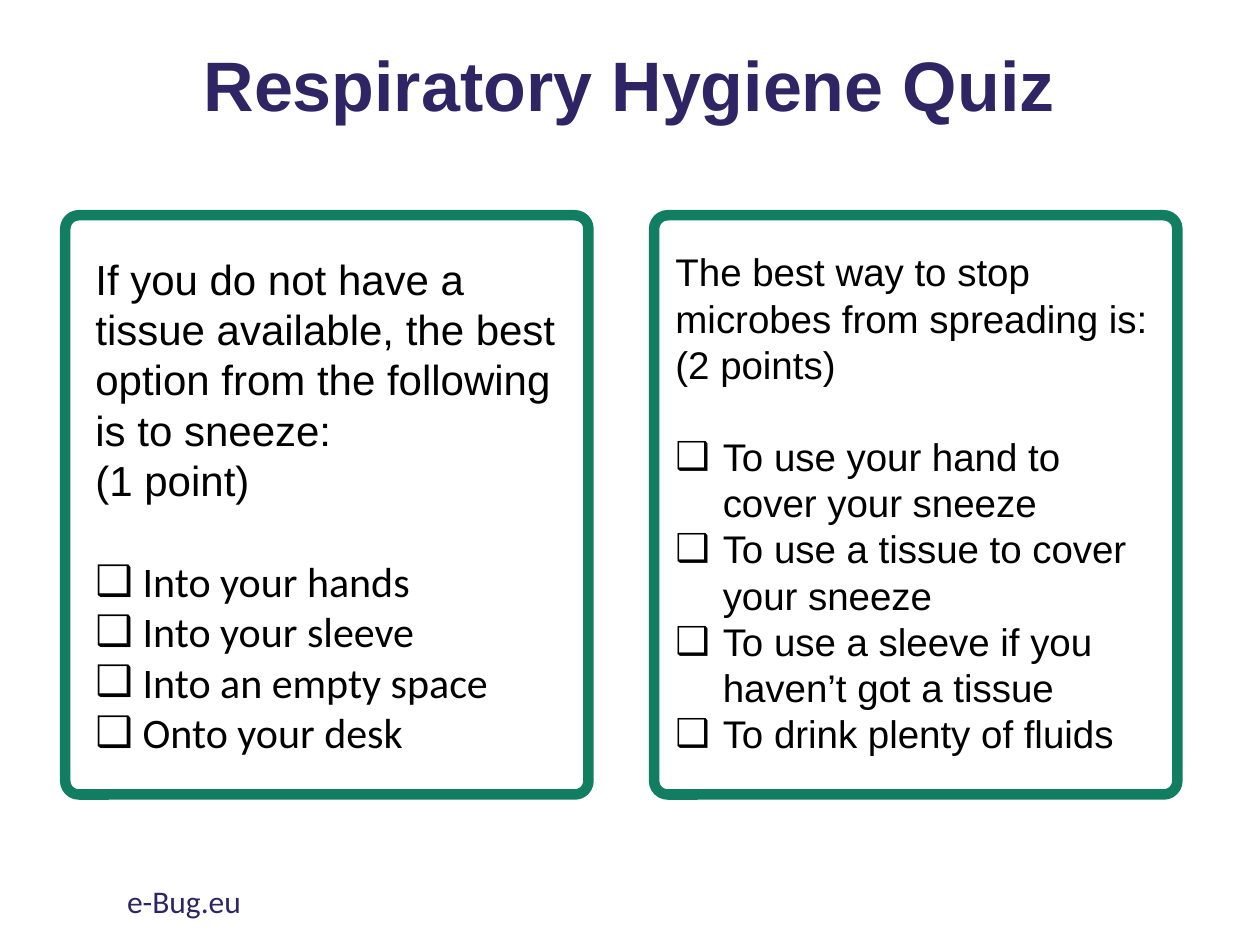
from lxml import etree
from pptx import Presentation
from pptx.dml.color import RGBColor
from pptx.enum import shapes, text
from pptx.oxml import ns
from pptx.util import Pt

COLORS = {"navy": "302564", "green": "117E62", "black": "000000"}
LINE_FACTOR = 1.2
HANGING = 27
CARD_TOP, CARD_WIDTH, CARD_HEIGHT = 123, 299, 331


def rgb(name):
    return RGBColor.from_string(COLORS[name])


def place(shape, box):
    shape.left, shape.top, shape.width, shape.height = (Pt(value) for value in box)


def add_run(paragraph, words, size, font, color, bold=False):
    run = paragraph.add_run()
    run.text = words
    run.font.size = Pt(size)
    run.font.name = font
    run.font.bold = bold
    run.font.color.rgb = rgb(color)


def set_bullet(paragraph, character=None):
    """Give a paragraph a hanging bullet, or clear the inherited one."""
    properties = paragraph._p.get_or_add_pPr()
    hanging = HANGING if character else 0
    properties.set("marL", str(Pt(hanging)))
    properties.set("indent", str(Pt(-hanging)))
    tag = "a:buChar" if character else "a:buNone"
    bullet = etree.SubElement(properties, ns.qn(tag))
    if character:
        bullet.set("char", character)


def add_title(slide, box):
    title = slide.shapes.title
    place(title, box)
    frame = title.text_frame
    frame.vertical_anchor = text.MSO_ANCHOR.MIDDLE
    frame.auto_size = text.MSO_AUTO_SIZE.NONE
    paragraph = frame.paragraphs[0]
    paragraph.alignment = text.PP_ALIGN.CENTER
    paragraph.line_spacing = 0.9
    add_run(paragraph, "Respiratory Hygiene Quiz", 40, "Arial", "navy", bold=True)


def add_card(slide, box):
    card = slide.shapes.add_shape(
        shapes.MSO_SHAPE.ROUNDED_RECTANGLE, *(Pt(value) for value in box))
    card.adjustments[0] = 0.026
    card.shadow.inherit = False
    card.fill.background()
    card.line.color.rgb = rgb("green")
    card.line.width = Pt(6)


def add_question(slide, box, index, inset, size, prompts, answers, answer_font):
    """Draw a card and fill a body placeholder inset (x, y) from its corner."""
    add_card(slide, box)
    left, top, width, height = box
    x, y = inset
    body = slide.placeholders[index]
    place(body, (left + x, top + y, width - 2 * x, height - 2 * y))
    frame = body.text_frame
    frame.auto_size = text.MSO_AUTO_SIZE.NONE
    line_height = size * LINE_FACTOR
    for number, words in enumerate(prompts + answers):
        paragraph = frame.add_paragraph() if number else frame.paragraphs[0]
        is_answer = number >= len(prompts)
        set_bullet(paragraph, "❑" if is_answer else None)
        paragraph.line_spacing = Pt(line_height)
        paragraph.space_before = Pt(line_height if number == len(prompts) else 0)
        add_run(paragraph, words, size, answer_font if is_answer else "Arial", "black")


def add_footer(slide, box):
    footer = slide.shapes.add_textbox(*(Pt(value) for value in box))
    footer.text_frame.word_wrap = True
    add_run(footer.text_frame.paragraphs[0], "e-Bug.eu", 18, "Calibri", "navy")


def main():
    presentation = Presentation()
    presentation.slide_width, presentation.slide_height = Pt(720), Pt(540)
    slide = presentation.slides.add_slide(presentation.slide_layouts[3])
    add_title(slide, (95, 0, 529, 101.5))
    add_question(
        slide, (37.3, CARD_TOP, CARD_WIDTH, CARD_HEIGHT), 1, (10, 18), 24,
        ["If you do not have a tissue available, the best option from the "
         "following is to sneeze:", "(1 point)"],
        ["Into your hands", "Into your sleeve", "Into an empty space",
         "Onto your desk"], "Calibri")
    add_question(
        slide, (373.8, CARD_TOP, CARD_WIDTH, CARD_HEIGHT), 2, (5, 15.3), 22,
        ["The best way to stop microbes from spreading is: (2 points)"],
        ["To use your hand to cover your sneeze",
         "To use a tissue to cover your sneeze",
         "To use a sleeve if you haven’t got a tissue",
         "To drink plenty of fluids"], "Arial")
    add_footer(slide, (65.5, 500.4, 243.4, 28.8))
    presentation.save("out.pptx")


if __name__ == "__main__":
    main()
